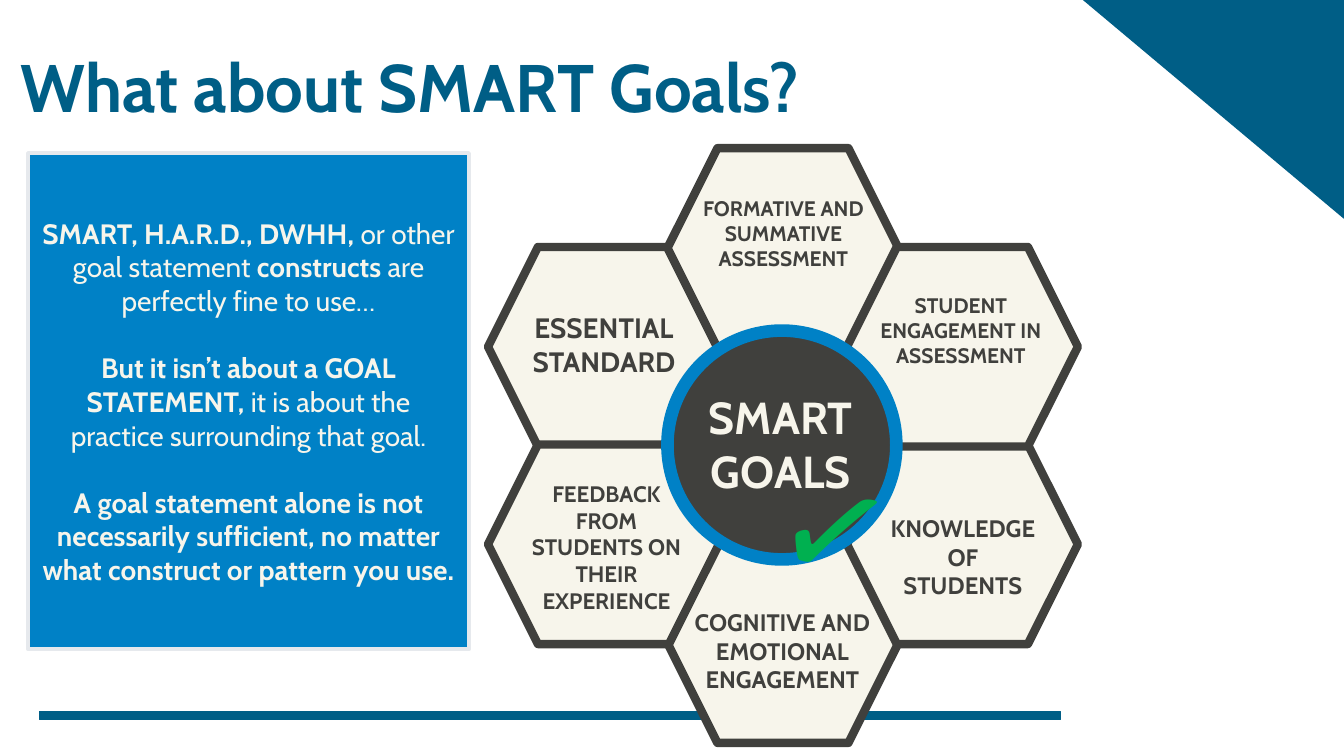
from dataclasses import dataclass

from pptx import Presentation
from pptx.dml.color import RGBColor
from pptx.enum.shapes import MSO_SHAPE
from pptx.enum.text import MSO_ANCHOR, MSO_AUTO_SIZE, PP_ALIGN
from pptx.util import Emu, Pt

PX = 9144  # 100 px to the inch


@dataclass(frozen=True)
class Theme:
    navy: str = "005E86"
    blue: str = "0081C6"
    cream: str = "F7F5EB"
    charcoal: str = "40403D"
    green: str = "00B050"
    frame: str = "E6E9ED"
    font: str = "Cabin"
    symbol_font: str = "Calibri"
    title: int = 48
    hub: int = 32
    body: int = 20
    label: int = 17
    label_feedback: int = 16
    label_small: int = 15
    tick: int = 100


class SlideBuilder:
    def __init__(self, prs, theme):
        self.theme = theme
        self.slide = prs.slides.add_slide(prs.slide_layouts[6])

    def shape(self, kind, box, fill, line=None, weight=1, rotation=0):
        sp = self.slide.shapes.add_shape(kind, *(Emu(v * PX) for v in box))
        sp.shadow.inherit = False
        sp.rotation = rotation
        sp.fill.solid()
        sp.fill.fore_color.rgb = RGBColor.from_string(fill)
        if line:
            sp.line.color.rgb = RGBColor.from_string(line)
            sp.line.width = Pt(weight)
        else:
            sp.line.fill.background()
        return sp

    def text(self, box, paragraphs, size, color, rotation=0, **style):
        sp = self.slide.shapes.add_textbox(*(Emu(v * PX) for v in box))
        sp.rotation = rotation
        self.set_text(sp, paragraphs, size, color, **style)
        return sp

    def set_text(self, sp, paragraphs, size, color, font=None, align=PP_ALIGN.CENTER,
                 anchor=MSO_ANCHOR.TOP, inset=10, spacing=None, gap=0,
                 auto_size=MSO_AUTO_SIZE.SHAPE_TO_FIT_TEXT):
        """Fill sp with paragraphs, each a list of (text, bold) runs."""
        tf = sp.text_frame
        frame_format = {
            "word_wrap": True, "auto_size": auto_size, "vertical_anchor": anchor,
            "margin_left": Emu(10 * PX), "margin_right": Emu(10 * PX),
            "margin_top": Emu(inset * PX), "margin_bottom": Emu(inset * PX),
        }
        for name, value in frame_format.items():
            setattr(tf, name, value)
        run_format = {"name": font or self.theme.font, "size": Pt(size)}
        for i, runs in enumerate(paragraphs):
            p = tf.add_paragraph() if i else tf.paragraphs[0]
            p.alignment = align
            if spacing:
                p.line_spacing = spacing
            if i and gap:
                p.space_before = Pt(gap)
            for words, bold in runs:
                r = p.add_run()
                r.text = words
                for name, value in {**run_format, "bold": bold}.items():
                    setattr(r.font, name, value)
                r.font.color.rgb = RGBColor.from_string(color)


def bold_lines(*lines):
    return [[(line, True)] for line in lines]


THEME = Theme()

# Column and row steps of each hexagon from the centre of the ring
RING = [(-1, -1), (0, 2), (1, 1), (0, -2), (1, -1), (-1, 1)]
RING_LEFT, RING_TOP, COLUMN_STEP, ROW_STEP = 662, 343, 178, 98

LABELS = [
    ((495, 298, 208, 88), THEME.body, ["ESSENTIAL STANDARD"]),
    ((672, 593, 208, 106), THEME.label, ["COGNITIVE AND EMOTIONAL ENGAGEMENT"]),
    ((851, 500, 208, 106), THEME.label, ["KNOWLEDGE", "OF", "STUDENTS"]),
    ((673, 184, 208, 96), THEME.label_small, ["FORMATIVE AND SUMMATIVE ASSESSMENT"]),
    ((849, 280, 208, 96), THEME.label_small, ["STUDENT ENGAGEMENT IN ASSESSMENT"]),
    ((504, 466, 195, 155), THEME.label_feedback,
     ["FEEDBACK", "FROM STUDENTS ON THEIR EXPERIENCE"]),
]

MESSAGE = [
    [("SMART, H.A.R.D., DWHH, ", True), ("or other goal statement ", False),
     ("constructs ", True), ("are perfectly fine to use…", False)],
    [("But it isn’t about a GOAL STATEMENT,", True),
     (" it is about the practice surrounding that goal.", False)],
    [("A goal statement alone is not necessarily sufficient, "
      "no matter what construct or pattern you use.", True)],
]


def main():
    prs = Presentation()
    prs.slide_width, prs.slide_height = Emu(1333 * PX), Emu(750 * PX)
    t = THEME
    s = SlideBuilder(prs, t)

    s.shape(MSO_SHAPE.RIGHT_TRIANGLE, (1074, 0, 260, 218), t.navy, rotation=180)
    s.shape(MSO_SHAPE.RECTANGLE, (39, 706, 1013, 8), t.navy, t.navy)
    s.text((11, 7, 1250, 145), bold_lines("What about SMART Goals?"), t.title, t.navy,
           align=PP_ALIGN.LEFT, anchor=MSO_ANCHOR.MIDDLE, inset=5, spacing=1.14,
           auto_size=MSO_AUTO_SIZE.NONE)

    for column, row in RING:
        box = (RING_LEFT + column * COLUMN_STEP, RING_TOP + row * ROW_STEP, 229, 198)
        s.shape(MSO_SHAPE.HEXAGON, box, t.cream, t.charcoal, 6)
    for box, size, lines in LABELS:
        s.text(box, bold_lines(*lines), size, t.charcoal)

    s.shape(MSO_SHAPE.OVAL, (662, 328, 227, 227), t.charcoal, t.blue, 9)
    s.text((661, 377, 227, 128), bold_lines("SMART GOALS"), t.hub, t.cream)
    s.text((761, 436, 209, 189), bold_lines("✓"), t.tick, t.green, rotation=12.4,
           font=t.symbol_font, align=PP_ALIGN.LEFT)

    panel = s.shape(MSO_SHAPE.RECTANGLE, (28, 152, 437, 492), t.blue, t.frame, 3)
    s.set_text(panel, MESSAGE, t.body, t.cream, anchor=MSO_ANCHOR.MIDDLE, gap=24,
               auto_size=MSO_AUTO_SIZE.NONE)

    prs.save("out.pptx")


if __name__ == "__main__":
    main()
